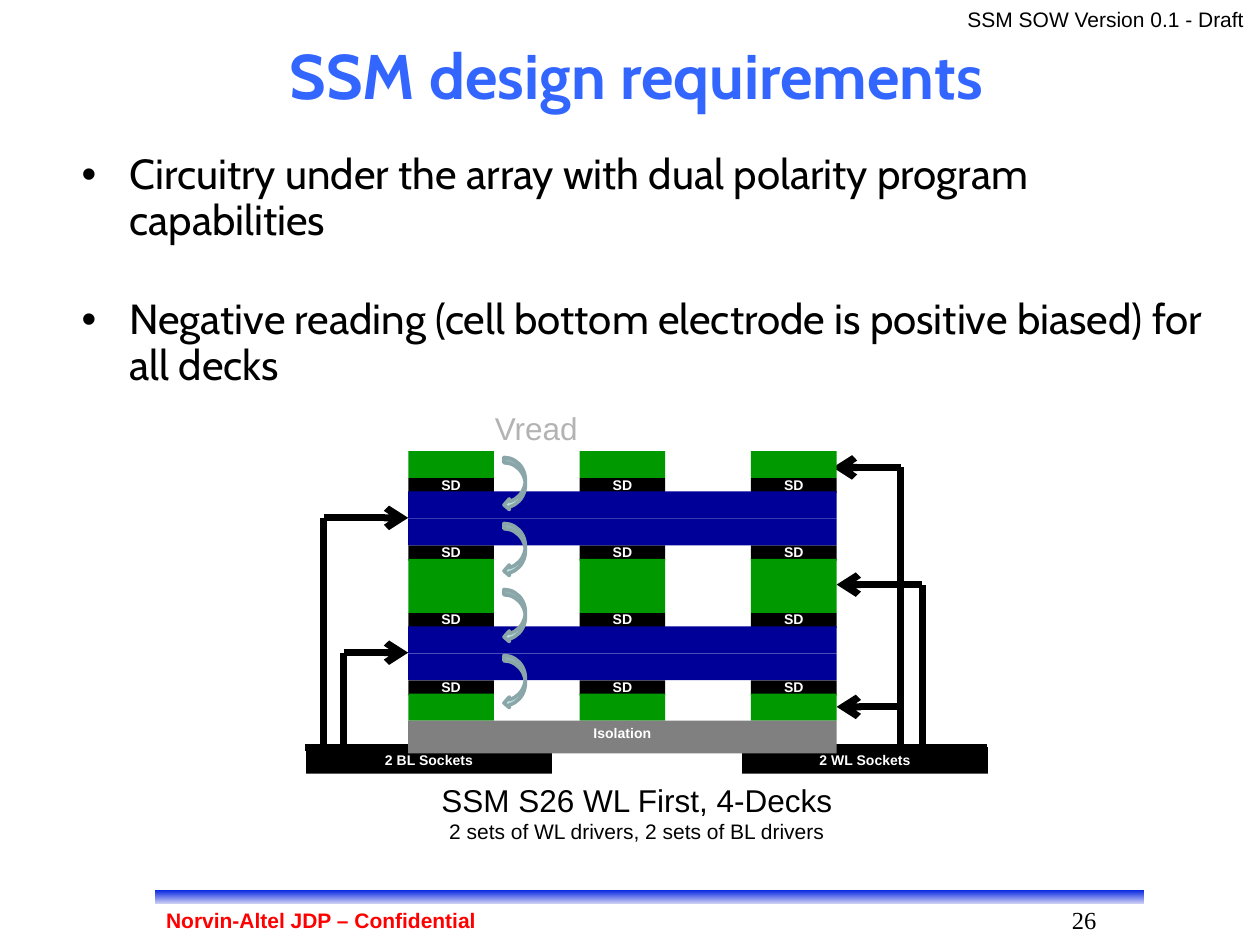
"""Builds the slide on SSM design requirements with its four-deck array diagram."""
from dataclasses import dataclass

from lxml import etree
from pptx import Presentation
from pptx.dml.color import RGBColor
from pptx.enum.shapes import MSO_CONNECTOR, MSO_SHAPE
from pptx.enum.text import MSO_ANCHOR, PP_ALIGN
from pptx.oxml.ns import qn
from pptx.util import Inches, Pt

RECT, CURVED_ARROW = MSO_SHAPE.RECTANGLE, MSO_SHAPE.CURVED_LEFT_ARROW
STRAIGHT = MSO_CONNECTOR.STRAIGHT
LEFT, CENTER, RIGHT = PP_ALIGN.LEFT, PP_ALIGN.CENTER, PP_ALIGN.RIGHT
TOP, MIDDLE = MSO_ANCHOR.TOP, MSO_ANCHOR.MIDDLE


@dataclass(frozen=True)
class Theme:
    """Colours, fonts and type sizes of the slide."""
    heading_font: str = "Cabin"
    label_font: str = "Arial"
    number_font: str = "Times New Roman"
    title: int = 36
    body: int = 24
    caption: int = 18
    number: int = 14
    small: int = 12
    label: int = 8
    blue: str = "3366FF"
    black: str = "000000"
    white: str = "FFFFFF"
    red: str = "FF0000"
    pale: str = "B3B3B3"
    isolation: str = "808080"
    word_line: str = "009900"
    bit_line: str = "000099"
    arrow: str = "BBE0E3"
    arrow_edge: str = "8AA6A8"
    rule_start: str = "0020E0"
    rule_end: str = "DADAF6"


class SlideBuilder:
    """Draws styled elements on one slide, measured on a 100 by 75 grid."""

    def __init__(self, deck, theme):
        self.theme = theme
        self.slide = deck.slides.add_slide(deck.slide_layouts[6])
        self.column = deck.slide_width / 100
        self.row = deck.slide_height / 75

    def place(self, x, y, w, h):
        """Turn grid units into slide lengths."""
        return (int(x * self.column), int(y * self.row),
                int(w * self.column), int(h * self.row))

    def style(self, paragraph, size, color, font, bold=False, align=LEFT):
        """Set the type and alignment of a paragraph."""
        paragraph.alignment = align
        paragraph.font.size = Pt(size)
        paragraph.font.name = font
        paragraph.font.bold = bold
        paragraph.font.color.rgb = RGBColor.from_string(color)

    def text(self, area, lines, color, font=None, bold=False, align=LEFT,
             anchor=TOP, wrap=True):
        """Add a text box from pairs of wording and size."""
        frame = self.slide.shapes.add_textbox(*self.place(*area)).text_frame
        frame.word_wrap = wrap
        frame.vertical_anchor = anchor
        for index, (wording, size) in enumerate(lines):
            paragraph = frame.add_paragraph() if index else frame.paragraphs[0]
            paragraph.text = wording
            self.style(paragraph, size, color, font or self.theme.label_font, bold, align)

    def bullets(self, area, points, gap):
        """Add a bulleted list with a gap in points between entries."""
        frame = self.slide.shapes.add_textbox(*self.place(*area)).text_frame
        frame.word_wrap = True
        for index, point in enumerate(points):
            paragraph = frame.add_paragraph() if index else frame.paragraphs[0]
            paragraph.text = point
            paragraph.line_spacing = 0.9
            if index:
                paragraph.space_before = Pt(gap)
            properties = paragraph._p.get_or_add_pPr()
            properties.set("marL", str(Inches(0.38)))
            properties.set("indent", str(Inches(-0.38)))
            etree.SubElement(properties, qn("a:buFont"), typeface=self.theme.label_font)
            etree.SubElement(properties, qn("a:buChar"), char="•")
            self.style(paragraph, self.theme.body, self.theme.black, self.theme.heading_font)

    def shape(self, kind, area, fill, edge=None, edge_width=2):
        """Add a flat preset shape."""
        shape = self.slide.shapes.add_shape(kind, *self.place(*area))
        shape.shadow.inherit = False
        shape.fill.solid()
        shape.fill.fore_color.rgb = RGBColor.from_string(fill)
        if edge:
            shape.line.color.rgb = RGBColor.from_string(edge)
            shape.line.width = Pt(edge_width)
        else:
            shape.line.fill.background()
        return shape

    def block(self, area, fill, label=None, anchor=TOP):
        """Add a layer of the array, with a label if given."""
        block = self.shape(RECT, area, fill)
        if label:
            block.text_frame.vertical_anchor = anchor
            paragraph = block.text_frame.paragraphs[0]
            paragraph.text = label
            paragraph.line_spacing = 0.9
            self.style(paragraph, self.theme.label, self.theme.white,
                       self.theme.label_font, True, CENTER)

    def rule(self, area):
        """Add the shaded footer rule."""
        theme = self.theme
        rule = self.shape(RECT, area, theme.rule_start, theme.white, 1)
        rule.fill.gradient()
        rule.fill.gradient_angle = 270
        for stop, color in zip(rule.fill.gradient_stops, (theme.rule_start, theme.rule_end)):
            stop.color.rgb = RGBColor.from_string(color)

    def wire(self, start, end, arrow=False):
        """Add a thick line, with an arrowhead at its end if wanted."""
        wire = self.slide.shapes.add_connector(
            STRAIGHT, *self.place(*start, *end))
        wire.line.color.rgb = RGBColor.from_string(self.theme.black)
        wire.line.width = Pt(4)
        if arrow:
            etree.SubElement(wire.line._get_or_add_ln(), qn("a:tailEnd"), type="arrow")
        etree.SubElement(wire._element.spPr, qn("a:effectLst"))


def draw_wiring(page):
    """Draw the sockets and the wires that drive the array."""
    base, array_left, array_right = 59.3, 32.4, 66.4
    page.wire((78.3, base), (24.2, base))
    for riser, top in ((71.5, 37.1), (73.2, 46.4), (27.3, 51.8), (25.7, 41.1)):
        page.wire((riser, base), (riser, top))
    for riser, level, target in ((71.5, 56.1, array_right), (73.2, 46.4, array_right),
                                 (71.5, 37.1, 66.1), (25.7, 41.1, array_left),
                                 (27.3, 51.8, array_left)):
        page.wire((riser, level), (target, level), arrow=True)
    for left, label in ((24.3, "2 BL Sockets"), (58.9, "2 WL Sockets")):
        page.block((left, base, 19.5, 2.1), page.theme.black, label)


def draw_array(page):
    """Stack four decks of cells between word lines and bit lines."""
    theme = page.theme
    left, top, unit, pitch, pillar, span = 32.4, 35.8, 1.07, 13.6, 6.8, 34
    pillars = [left + pitch * index for index in range(3)]
    for step in (2, 7, 12, 17):
        for x in pillars:
            page.block((x, top + step * unit, pillar, 1.2), theme.black, "SD", MIDDLE)
    for step in (0, 8, 10, 18):
        for x in pillars:
            page.block((x, top + step * unit, pillar, 2 * unit), theme.word_line)
    for step in (3, 5, 13, 15):
        page.block((left, top + step * unit, span, 2 * unit), theme.bit_line)
    page.block((left, top + 20 * unit, span, 2.6), theme.isolation, "Isolation")
    for deck in range(4):
        page.shape(CURVED_ARROW, (40, 36.3 + 5.24 * deck, 1.7, 4.2),
                   theme.arrow, theme.arrow_edge)


def main():
    """Build and save the slide."""
    deck = Presentation()
    deck.slide_width, deck.slide_height = Inches(10), Inches(7.5)
    theme = Theme()
    page = SlideBuilder(deck, theme)

    page.rule((12.2, 70.6, 78.7, 1.2))
    page.text((75.8, 0, 24.2, 3), [("SSM SOW Version 0.1 - Draft", theme.small)],
              theme.black, wrap=False)
    page.text((74.2, 71.3, 13.8, 3.7), [("26", theme.number)], theme.black,
              theme.number_font, align=RIGHT)
    page.text((5.5, 1.7, 90, 8.4), [("SSM design requirements", theme.title)],
              theme.blue, theme.heading_font, True, CENTER, MIDDLE)
    page.bullets((5.5, 11.7, 92.6, 31.7), (
        "Circuitry under the array with dual polarity program capabilities",
        "Negative reading (cell bottom electrode is positive biased) for all decks",
    ), gap=31)
    page.text((29.7, 61.5, 41.7, 7.7), [
        ("SSM S26 WL First, 4-Decks", theme.caption),
        ("2 sets of WL drivers, 2 sets of BL drivers", theme.small),
    ], theme.black, align=CENTER, wrap=False)
    draw_wiring(page)
    draw_array(page)
    page.text((38.3, 32, 8.7, 4), [("Vread", theme.caption)], theme.pale, wrap=False)
    page.text((12.2, 71.5, 31.9, 2.6), [("Norvin-Altel JDP – Confidential", theme.small)],
              theme.red, bold=True)
    deck.save("out.pptx")


if __name__ == "__main__":
    main()
